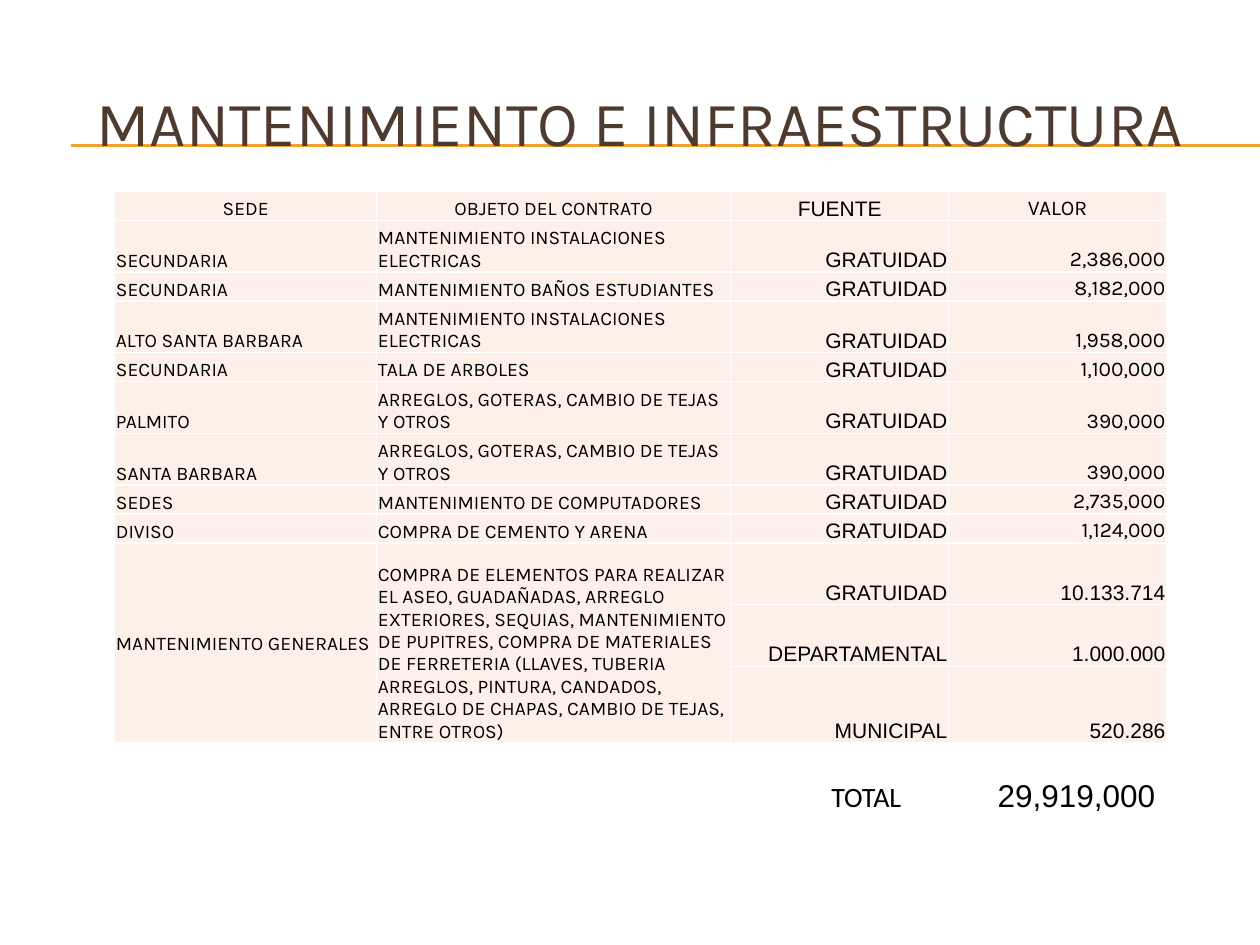
"""Build the maintenance and infrastructure contracts slide."""
from lxml.etree import SubElement
from pptx import Presentation
from pptx.dml.color import RGBColor
from pptx.enum.shapes import MSO_CONNECTOR
from pptx.enum.text import MSO_ANCHOR, PP_ALIGN
from pptx.oxml.ns import qn
from pptx.util import Inches, Pt

BLACK = RGBColor(0x00, 0x00, 0x00)
BROWN = RGBColor(0x4E, 0x3B, 0x30)
GOLD = RGBColor(0xF0, 0xA2, 0x2E)
CREAM = RGBColor(0xFC, 0xF0, 0xE8)
WHITE = RGBColor(0xFF, 0xFF, 0xFF)

TITLE = "MANTENIMIENTO E INFRAESTRUCTURA"
HEADER = ("SEDE", "OBJETO DEL CONTRATO", "FUENTE", "VALOR")
ELECTRIC = "MANTENIMIENTO INSTALACIONES ELECTRICAS"
ROOFS = "ARREGLOS, GOTERAS, CAMBIO DE TEJAS Y OTROS"
SUPPLIES = (
    "COMPRA DE ELEMENTOS PARA REALIZAR EL ASEO, GUADAÑADAS, ARREGLO "
    "EXTERIORES, SEQUIAS, MANTENIMIENTO DE PUPITRES, COMPRA DE MATERIALES "
    "DE FERRETERIA (LLAVES, TUBERIA ARREGLOS, PINTURA, CANDADOS, "
    "ARREGLO DE CHAPAS, CAMBIO DE TEJAS, ENTRE OTROS)"
)
CONTRACTS = [
    ("SECUNDARIA", ELECTRIC, "GRATUIDAD", "2,386,000"),
    ("SECUNDARIA", "MANTENIMIENTO BAÑOS ESTUDIANTES", "GRATUIDAD", "8,182,000"),
    ("ALTO SANTA BARBARA", ELECTRIC, "GRATUIDAD", "1,958,000"),
    ("SECUNDARIA", "TALA DE ARBOLES", "GRATUIDAD", "1,100,000"),
    ("PALMITO", ROOFS, "GRATUIDAD", "390,000"),
    ("SANTA BARBARA", ROOFS, "GRATUIDAD", "390,000"),
    ("SEDES", "MANTENIMIENTO DE COMPUTADORES", "GRATUIDAD", "2,735,000"),
    ("DIVISO", "COMPRA DE CEMENTO Y ARENA", "GRATUIDAD", "1,124,000"),
]
GENERAL = [
    ("MANTENIMIENTO GENERALES", SUPPLIES, "GRATUIDAD", "10.133.714"),
    ("", "", "DEPARTAMENTAL", "1.000.000"),
    ("", "", "MUNICIPAL", "520.286"),
]
TOTAL = [("TOTAL", "Calibri", 16), ("\t", "Karla", 18), ("29,919,000", "Arial", 18)]

ROWS = [HEADER] + CONTRACTS + GENERAL
GENERAL_ROW = 1 + len(CONTRACTS)
COL_WIDTHS = [2.08, 2.81, 1.73, 1.73]
SHORT, TALL = 0.23, 0.41
GENERAL_HEIGHTS = [0.49, 0.49, 0.61]
ROW_HEIGHTS = (
    [SHORT]
    + [TALL if row[1] in (ELECTRIC, ROOFS) else SHORT for row in CONTRACTS]
    + GENERAL_HEIGHTS
)
COL_FORMATS = [
    (PP_ALIGN.LEFT, "Karla", 11),
    (PP_ALIGN.LEFT, "Karla", 11),
    (PP_ALIGN.RIGHT, "Arial", 12),
    (PP_ALIGN.RIGHT, "Karla", 12),
]
CELL_FORMAT = {
    "margin_left": Inches(0.01),
    "margin_right": Inches(0.01),
    "margin_top": Inches(0.01),
    "margin_bottom": 0,
    "vertical_anchor": MSO_ANCHOR.BOTTOM,
}


def set_all(obj, values):
    for name, value in values.items():
        setattr(obj, name, value)


def add_run(p, text, font, size, color=BLACK):
    r = p.add_run()
    r.text = text
    set_all(r.font, {"name": font, "size": Pt(size)})
    r.font.color.rgb = color


def add_box(slide, left, top, width, height):
    sp = slide.shapes.add_textbox(*map(Inches, (left, top, width, height)))
    sp.text_frame.word_wrap = True
    return sp.text_frame


def add_rule(slide, y):
    line = slide.shapes.add_connector(
        MSO_CONNECTOR.STRAIGHT, Inches(0.56), Inches(y), Inches(10), Inches(y)
    )
    line.line.color.rgb = GOLD
    line.line.width = Pt(0.75)
    SubElement(line._element.spPr, qn("a:effectLst"))


def add_borders(cell):
    tc_pr = cell._tc.get_or_add_tcPr()
    for i, side in enumerate(("lnL", "lnR", "lnT", "lnB")):
        ln = tc_pr.makeelement(qn(f"a:{side}"), {"w": str(Pt(1))})
        fill = SubElement(ln, qn("a:solidFill"))
        SubElement(fill, qn("a:srgbClr"), val=str(WHITE))
        tc_pr.insert(i, ln)


def add_contracts(slide):
    table = slide.shapes.add_table(
        len(ROWS), len(HEADER), Inches(0.91), Inches(1.52),
        Inches(sum(COL_WIDTHS)), Inches(sum(ROW_HEIGHTS)),
    ).table
    set_all(table, {"first_row": False, "horz_banding": False})
    for column, width in zip(table.columns, COL_WIDTHS):
        column.width = Inches(width)
    for row, height in zip(table.rows, ROW_HEIGHTS):
        row.height = Inches(height)
    for i, texts in enumerate(ROWS):
        for j, (text, (align, font, size)) in enumerate(zip(texts, COL_FORMATS)):
            cell = table.cell(i, j)
            set_all(cell, CELL_FORMAT)
            cell.fill.solid()
            cell.fill.fore_color.rgb = CREAM
            add_borders(cell)
            if text:
                p = cell.text_frame.paragraphs[0]
                p.alignment = PP_ALIGN.CENTER if i == 0 else align
                add_run(p, text, "Arial" if i >= GENERAL_ROW and j == 3 else font, size)
    for j in (0, 1):
        table.cell(GENERAL_ROW, j).merge(table.cell(len(ROWS) - 1, j))
    table.cell(GENERAL_ROW, 0).vertical_anchor = MSO_ANCHOR.MIDDLE


def main():
    prs = Presentation()
    set_all(prs, {"slide_width": Inches(10), "slide_height": Inches(7.5)})
    s = prs.slides.add_slide(prs.slide_layouts[6])
    for y in (1.15, 1.16):
        add_rule(s, y)

    tf = add_box(s, 0.33, 0.5, 9.5, 0.92)
    tf.vertical_anchor = MSO_ANCHOR.MIDDLE
    p = tf.paragraphs[0]
    p.alignment = PP_ALIGN.CENTER
    add_run(p, TITLE, "Karla", 36, BROWN)

    add_contracts(s)

    p = add_box(s, 6.5, 6.11, 2.83, 0.4).paragraphs[0]
    tabs = SubElement(p._p.get_or_add_pPr(), qn("a:tabLst"))
    SubElement(tabs, qn("a:tab"), pos=str(Inches(1.32)), algn="l")
    for text, font, size in TOTAL:
        add_run(p, text, font, size)

    prs.save("out.pptx")


if __name__ == "__main__":
    main()
